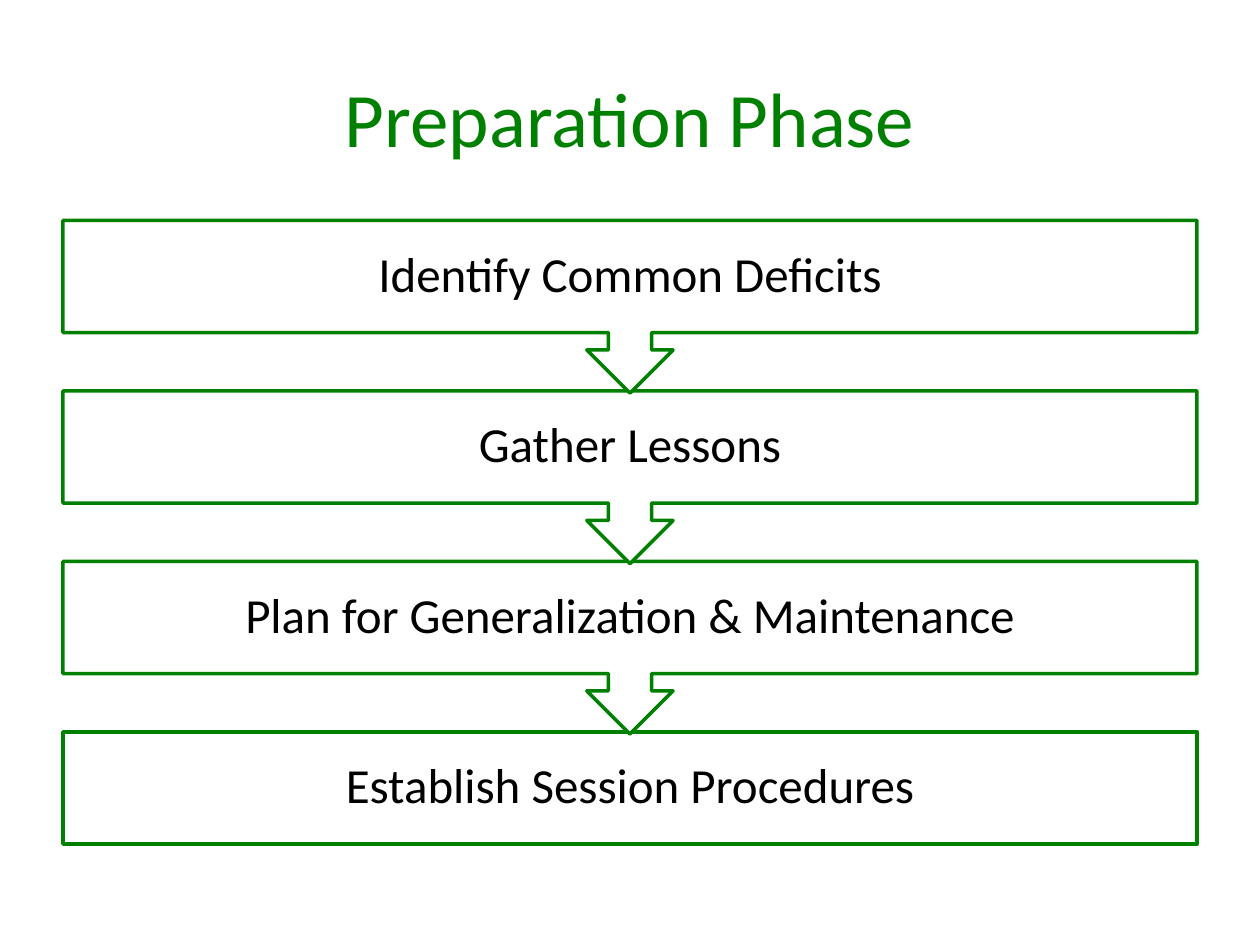
import pptx
import pptx.dml.color
import pptx.enum.shapes
import pptx.enum.text
import pptx.util

Inches = pptx.util.Inches
SHAPES = pptx.enum.shapes.MSO_SHAPE

TITLE = "Preparation Phase"
STEPS = [
    "Identify Common Deficits",
    "Gather Lessons",
    "Plan for Generalization & Maintenance",
    "Establish Session Procedures",
]
GREEN, BLACK, WHITE = "008000", "000000", "FFFFFF"

LEFT, WIDTH = 0.5, 9
FIRST_TOP, STEP_PITCH = 1.75, 1.353
BOX_HEIGHT, CALLOUT_HEIGHT = 0.89, 1.37


def color(hex_string):
    return pptx.dml.color.RGBColor.from_string(hex_string)


def write(shape, text, *, size, ink, inset, line_spacing=1.0):
    frame = shape.text_frame
    frame.word_wrap = True
    frame.vertical_anchor = pptx.enum.text.MSO_ANCHOR.MIDDLE
    frame.margin_left = frame.margin_right = Inches(inset)
    frame.margin_top = frame.margin_bottom = Inches(inset)
    paragraph = frame.paragraphs[0]
    paragraph.text = text
    paragraph.alignment = pptx.enum.text.PP_ALIGN.CENTER
    paragraph.line_spacing = line_spacing
    paragraph.font.name = "Calibri"
    paragraph.font.size = pptx.util.Pt(size)
    paragraph.font.color.rgb = color(ink)


def add_step(slide, index, text):
    """Draw one step; all but the last point down to the next one."""
    is_last = index == len(STEPS) - 1
    step = slide.shapes.add_shape(
        SHAPES.RECTANGLE if is_last else SHAPES.DOWN_ARROW_CALLOUT,
        Inches(LEFT),
        Inches(FIRST_TOP + index * STEP_PITCH),
        Inches(WIDTH),
        Inches(BOX_HEIGHT if is_last else CALLOUT_HEIGHT),
    )
    step.shadow.inherit = False
    step.fill.solid()
    step.fill.fore_color.rgb = color(WHITE)
    step.line.color.rgb = color(GREEN)
    step.line.width = pptx.util.Pt(2)
    write(step, text, size=28, ink=BLACK, inset=0.22, line_spacing=0.9)


def main():
    deck = pptx.Presentation()
    deck.slide_width, deck.slide_height = Inches(10), Inches(7.5)
    slide = deck.slides.add_slide(deck.slide_layouts[6])

    title = slide.shapes.add_textbox(
        Inches(LEFT), Inches(0.3), Inches(WIDTH), Inches(1.25)
    )
    write(title, TITLE, size=44, ink=GREEN, inset=0.05)

    # Bottom step first, so each arrow tip lies over the step below it.
    for index, text in reversed(list(enumerate(STEPS))):
        add_step(slide, index, text)

    deck.save("out.pptx")


if __name__ == "__main__":
    main()
